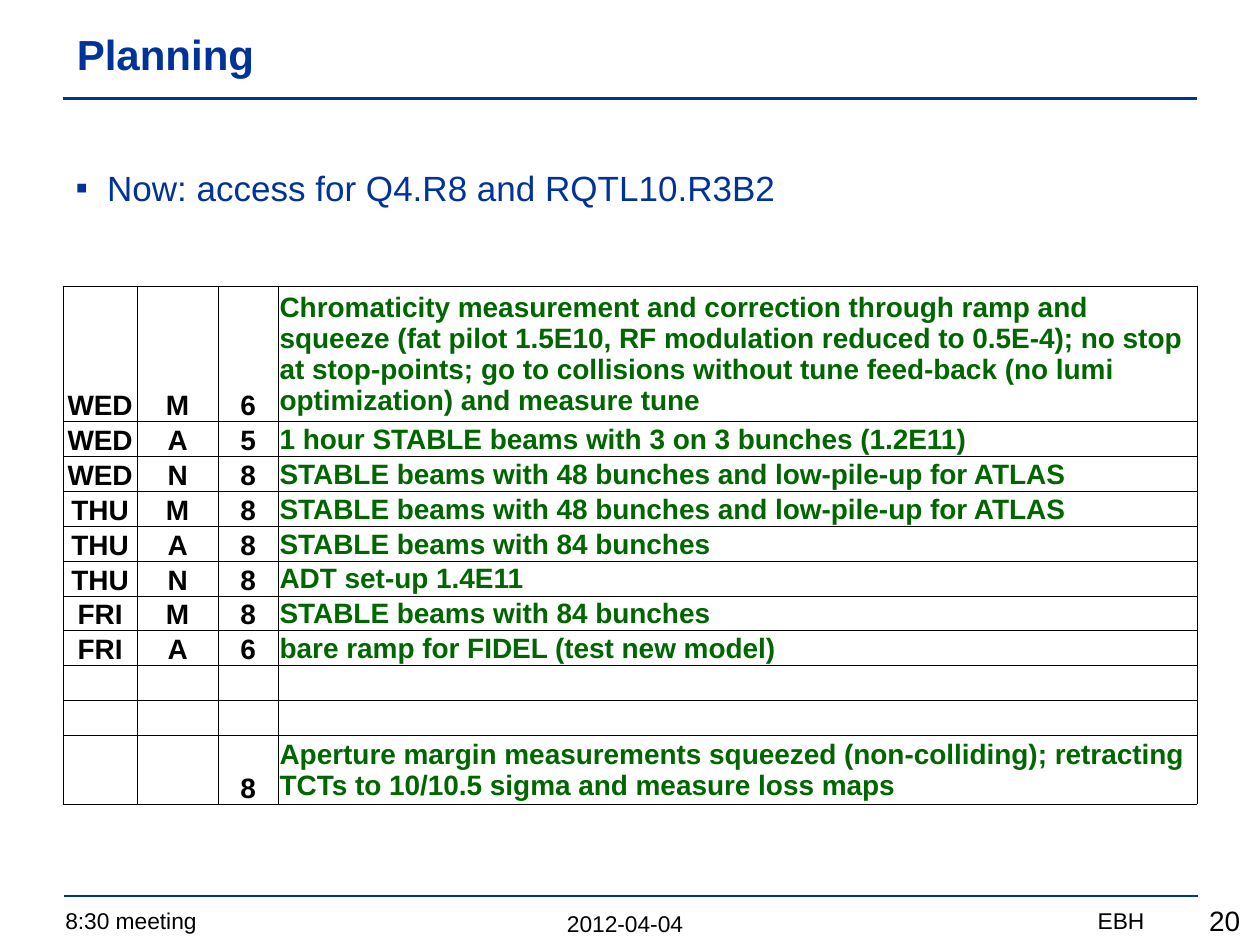
from lxml.etree import SubElement
from pptx import Presentation
from pptx.dml.color import RGBColor
from pptx.enum.shapes import MSO_CONNECTOR
from pptx.enum.text import MSO_ANCHOR, PP_ALIGN
from pptx.oxml.ns import qn
from pptx.util import Inches, Pt

BLUE, GREEN, BLACK, WHITE = "003399", "006600", "000000", "FFFFFF"

LOW_PILE_UP = "STABLE beams with 48 bunches and low-pile-up for ATLAS"
STABLE_84 = "STABLE beams with 84 bunches"
SHIFTS = [
    ("WED", "M", "6", "Chromaticity measurement and correction through ramp and squeeze "
     "(fat pilot 1.5E10, RF modulation reduced to 0.5E-4); no stop at stop-points; "
     "go to collisions without tune feed-back (no lumi optimization) and measure tune"),
    ("WED", "A", "5", "1 hour STABLE beams with 3 on 3 bunches (1.2E11)"),
    ("WED", "N", "8", LOW_PILE_UP),
    ("THU", "M", "8", LOW_PILE_UP),
    ("THU", "A", "8", STABLE_84),
    ("THU", "N", "8", "ADT set-up 1.4E11"),
    ("FRI", "M", "8", STABLE_84),
    ("FRI", "A", "6", "bare ramp for FIDEL (test new model)"),
    ("", "", "", ""),
    ("", "", "", ""),
    ("", "", "8", "Aperture margin measurements squeezed (non-colliding); "
     "retracting TCTs to 10/10.5 sigma and measure loss maps"),
]
COL_WIDTHS = [0.59, 0.64, 0.48, 7.29]
ROW_HEIGHTS = [1.07] + [0.27] * 9 + [0.54]


def rgb(color):
    return RGBColor.from_string(color)


def format_paragraph(p, size, color, align=PP_ALIGN.LEFT, bold=False):
    p.alignment = align
    p.font.name = "Arial"
    p.font.size = Pt(size)
    p.font.bold = bold
    p.font.color.rgb = rgb(color)


def place(sp, left, top, width, height):
    sp.left, sp.top = Inches(left), Inches(top)
    sp.width, sp.height = Inches(width), Inches(height)


def add_rule(s, left, top):
    line = s.shapes.add_connector(MSO_CONNECTOR.STRAIGHT, Inches(left), Inches(top),
                                  Inches(left + 9), Inches(top))
    line.line.color.rgb = rgb(BLUE)
    line.line.width = Pt(1.5)
    SubElement(line._element.spPr, qn("a:effectLst"))


def add_label(s, text, box, size, align):
    tf = s.shapes.add_textbox(*map(Inches, box)).text_frame
    tf.word_wrap = True
    tf.text = text
    format_paragraph(tf.paragraphs[0], size, BLACK, align)


def fill_title(sp, text):
    place(sp, 0.51, 0.09, 8.99, 0.68)
    tf = sp.text_frame
    tf.text = text
    tf.vertical_anchor = MSO_ANCHOR.MIDDLE
    format_paragraph(tf.paragraphs[0], 24, BLUE, bold=True)


def fill_body(sp, text):
    place(sp, 0.5, 0.86, 9, 6.16)
    tf = sp.text_frame
    tf.text = text
    tf.margin_top = Inches(0.46)
    p = tf.paragraphs[0]
    p.space_before = Pt(0)
    format_paragraph(p, 20, BLUE)
    pPr = p._p.get_or_add_pPr()
    pPr.set("marL", str(Inches(0.25)))
    pPr.set("indent", str(-Inches(0.25)))
    bullet = pPr.makeelement(qn("a:buChar"), {"char": "▪"})
    pPr.find(qn("a:defRPr")).addprevious(bullet)


def add_borders(cell):
    tcPr = cell._tc.get_or_add_tcPr()
    for side in ("a:lnL", "a:lnR", "a:lnT", "a:lnB"):
        ln = SubElement(tcPr, qn(side), w=str(Pt(0.5)))
        SubElement(SubElement(ln, qn("a:solidFill")), qn("a:srgbClr"), val=BLACK)


def fill_cell(cell, text, is_task):
    add_borders(cell)
    cell.fill.solid()
    cell.fill.fore_color.rgb = rgb(WHITE)
    cell.margin_left = cell.margin_right = cell.margin_top = Inches(0.01)
    cell.margin_bottom = 0
    cell.vertical_anchor = MSO_ANCHOR.MIDDLE if is_task else MSO_ANCHOR.BOTTOM
    cell.text = text
    p = cell.text_frame.paragraphs[0]
    format_paragraph(p, 16, GREEN if is_task else BLACK,
                     PP_ALIGN.LEFT if is_task else PP_ALIGN.CENTER, True)
    if not text:
        SubElement(p._p, qn("a:endParaRPr"), sz="1600")


def add_plan(s):
    table = s.shapes.add_table(len(SHIFTS), len(COL_WIDTHS), Inches(0.5), Inches(2.27),
                               Inches(9), Inches(sum(ROW_HEIGHTS))).table
    table.first_row = table.horz_banding = False
    for column, width in zip(table.columns, COL_WIDTHS):
        column.width = Inches(width)
    for row, height, texts in zip(table.rows, ROW_HEIGHTS, SHIFTS):
        row.height = Inches(height)
        for i, (cell, text) in enumerate(zip(row.cells, texts)):
            fill_cell(cell, text, i == 3)


def main():
    prs = Presentation()
    prs.slide_width, prs.slide_height = Inches(10), Inches(7.5)
    s = prs.slides.add_slide(prs.slide_layouts[1])
    fill_title(s.shapes.title, "Planning")
    fill_body(s.placeholders[1], "Now: access for Q4.R8 and RQTL10.R3B2")
    add_rule(s, 0.5, 0.78)
    add_rule(s, 0.51, 7.11)
    add_label(s, "2012-04-04", (2.42, 7.17, 5.08, 0.32), 13, PP_ALIGN.CENTER)
    add_label(s, "8:30 meeting", (0.42, 7.15, 3.7, 0.32), 13, PP_ALIGN.LEFT)
    add_label(s, "EBH", (6.26, 7.15, 2.92, 0.32), 13, PP_ALIGN.RIGHT)
    add_label(s, "20", (8.79, 7.12, 1.15, 0.37), 16, PP_ALIGN.RIGHT)
    add_plan(s)
    prs.save("out.pptx")


if __name__ == "__main__":
    main()
